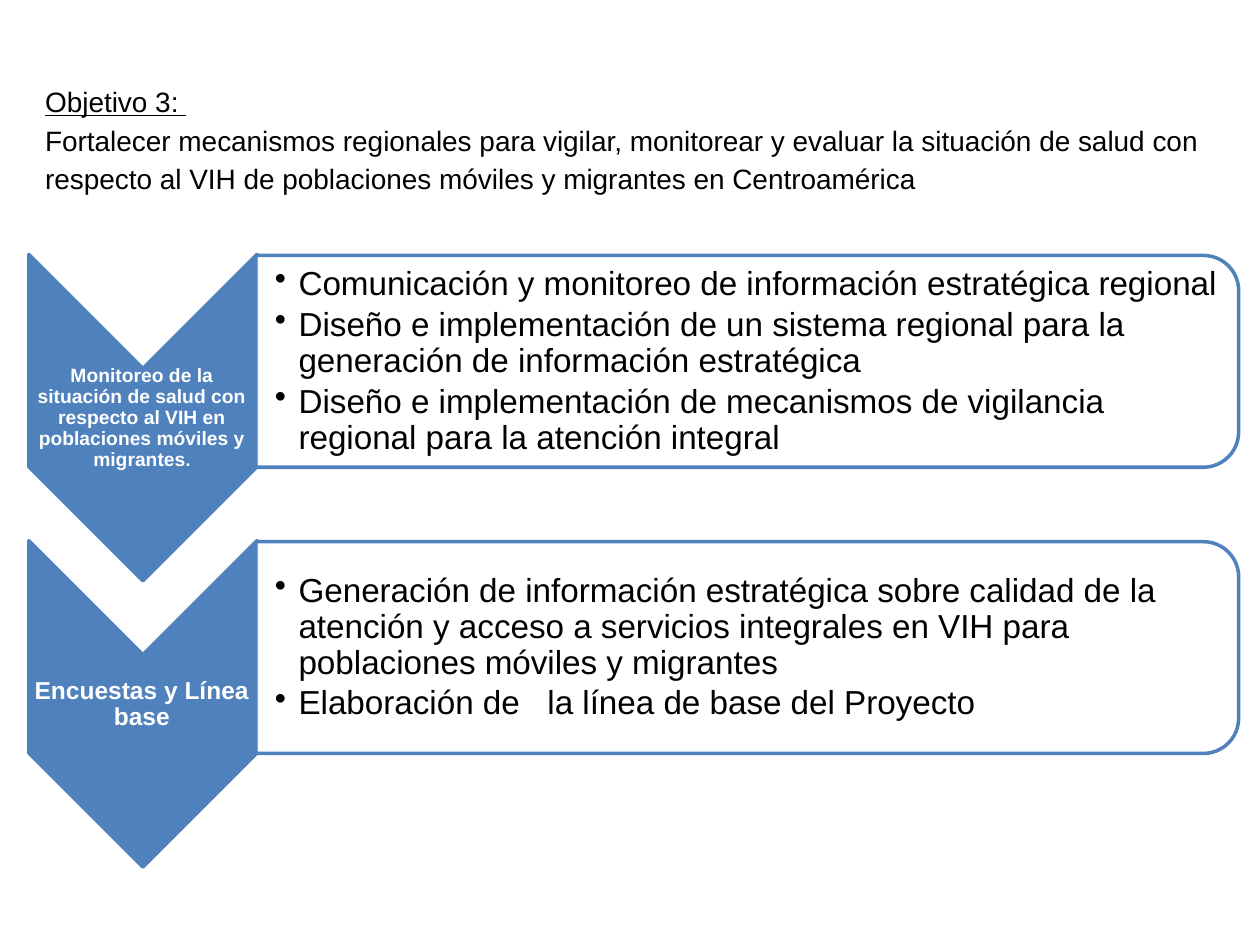
import pptx
import pptx.dml.color
import pptx.enum.shapes
import pptx.enum.text
import pptx.oxml.ns
import pptx.util
from lxml import etree
from pptx.util import Cm

COLORS = {"blue": "4F81BD", "white": "FFFFFF", "black": "000000"}
FONT = "Arial"
ROW_TOP = 5.36
ROW_STEP = 5.77
OBJECTIVE = [
    ("Objetivo 3: ", {"underline": True}),
    ("\n", {}),
    ("Fortalecer mecanismos regionales para vigilar, monitorear y evaluar la situación de salud "
     "con respecto al VIH de poblaciones móviles y migrantes en Centroamérica", {}),
]
ROWS = [
    {
        "label": [("Monitoreo de la situación de salud con respecto al VIH en poblaciones "
                   "móviles y migrantes", {}), (".", {"size": 10})],
        "label_size": 11,
        "activities": [
            "Comunicación y monitoreo de información estratégica regional",
            "Diseño e implementación de un sistema regional para la generación de información estratégica",
            "Diseño e implementación de mecanismos de vigilancia regional para la atención integral",
        ],
    },
    {
        "label": [("Encuestas y Línea base", {})],
        "label_size": 14,
        "activities": [
            "Generación de información estratégica sobre calidad de la atención y acceso a servicios "
            "integrales en VIH para poblaciones móviles y migrantes",
            "Elaboración de   la línea de base del Proyecto",
        ],
    },
]


def rgb(name):
    """Return the named colour as an RGB value."""
    return pptx.dml.color.RGBColor.from_string(COLORS[name])


def add_bullet(paragraph):
    """Give the paragraph a round bullet with a hanging indent."""
    properties = paragraph._p.get_or_add_pPr()
    properties.set("marL", str(Cm(0.48)))
    properties.set("indent", str(-Cm(0.48)))
    bullet = etree.SubElement(properties, pptx.oxml.ns.qn("a:buChar"))
    bullet.set("char", "•")


def write_text(frame, paragraphs, size, color, bold=False, align="LEFT", spacing=0.9,
               after=0, bullets=False, insets=(0.03, 0.03, 0.03, 0.03)):
    """Fill a text frame with paragraphs of (text, overrides) runs."""
    frame.word_wrap = True
    frame.auto_size = pptx.enum.text.MSO_AUTO_SIZE.NONE
    frame.vertical_anchor = pptx.enum.text.MSO_ANCHOR.MIDDLE
    frame.margin_left, frame.margin_top, frame.margin_right, frame.margin_bottom = map(Cm, insets)
    for index, runs in enumerate(paragraphs):
        paragraph = frame.add_paragraph() if index else frame.paragraphs[0]
        paragraph.alignment = getattr(pptx.enum.text.PP_ALIGN, align)
        paragraph.line_spacing = spacing
        paragraph.space_before = pptx.util.Pt(0)
        paragraph.space_after = pptx.util.Pt(after)
        if bullets:
            add_bullet(paragraph)
        for text, overrides in runs:
            if text == "\n":
                paragraph.add_line_break()
                continue
            run = paragraph.add_run()
            run.text = text
            run.font.name = FONT
            run.font.size = pptx.util.Pt(overrides.get("size", size))
            run.font.bold = bold
            run.font.underline = overrides.get("underline", False)
            run.font.color.rgb = rgb(color)


def add_title(slide):
    """Place and format the title placeholder."""
    title = slide.shapes.title
    title.left, title.top, title.width, title.height = map(Cm, (0.66, 1.52, 24.21, 3.18))
    write_text(title.text_frame, [OBJECTIVE], 16, "black", spacing=1.15,
               insets=(0.25, 0.13, 0.25, 0.81))


def add_turned_shape(slide, kind, left, top, width, height, fill, opacity=100):
    """Add a blue-outlined shape turned a quarter clockwise."""
    shape = slide.shapes.add_shape(kind, Cm(left), Cm(top), Cm(width), Cm(height))
    shape.rotation = 90
    shape.shadow.inherit = False
    shape.fill.solid()
    shape.fill.fore_color.rgb = rgb(fill)
    shape.line.color.rgb = rgb("blue")
    shape.line.width = pptx.util.Pt(2)
    if opacity < 100:
        color = shape._element.spPr.find(".//" + pptx.oxml.ns.qn("a:srgbClr"))
        etree.SubElement(color, pptx.oxml.ns.qn("a:alpha")).set("val", str(opacity * 1000))


def add_text(slide, left, top, width, height, paragraphs, **text_format):
    """Add a text box with formatted paragraphs."""
    box = slide.shapes.add_textbox(Cm(left), Cm(top), Cm(width), Cm(height))
    write_text(box.text_frame, paragraphs, **text_format)


def add_row(slide, top, row):
    """Add a chevron with its label and the panel of activities beside it."""
    kinds = pptx.enum.shapes.MSO_SHAPE
    add_turned_shape(slide, kinds.CHEVRON, -0.41, top + 0.76, 6.58, 4.6, "blue")
    add_text(slide, 0.56, top + 2.08, 4.6, 1.98, [row["label"]], size=row["label_size"],
             color="white", bold=True, align="CENTER")
    add_turned_shape(slide, kinds.ROUND_2_SAME_RECTANGLE, 12.93, top - 7.98, 4.27, 19.81,
                     "white", opacity=90)
    add_text(slide, 5.16, top, 19.61, 3.86, [[(text, {})] for text in row["activities"]],
             size=19, color="black", after=2.85, bullets=True, insets=(0.38, 0.03, 0.03, 0.03))


def main():
    """Build and save the presentation."""
    presentation = pptx.Presentation()
    presentation.slide_width, presentation.slide_height = Cm(25.4), Cm(19.05)
    slide = presentation.slides.add_slide(presentation.slide_layouts[5])
    add_title(slide)
    for index, row in enumerate(ROWS):
        add_row(slide, ROW_TOP + index * ROW_STEP, row)
    presentation.save("out.pptx")


if __name__ == "__main__":
    main()
